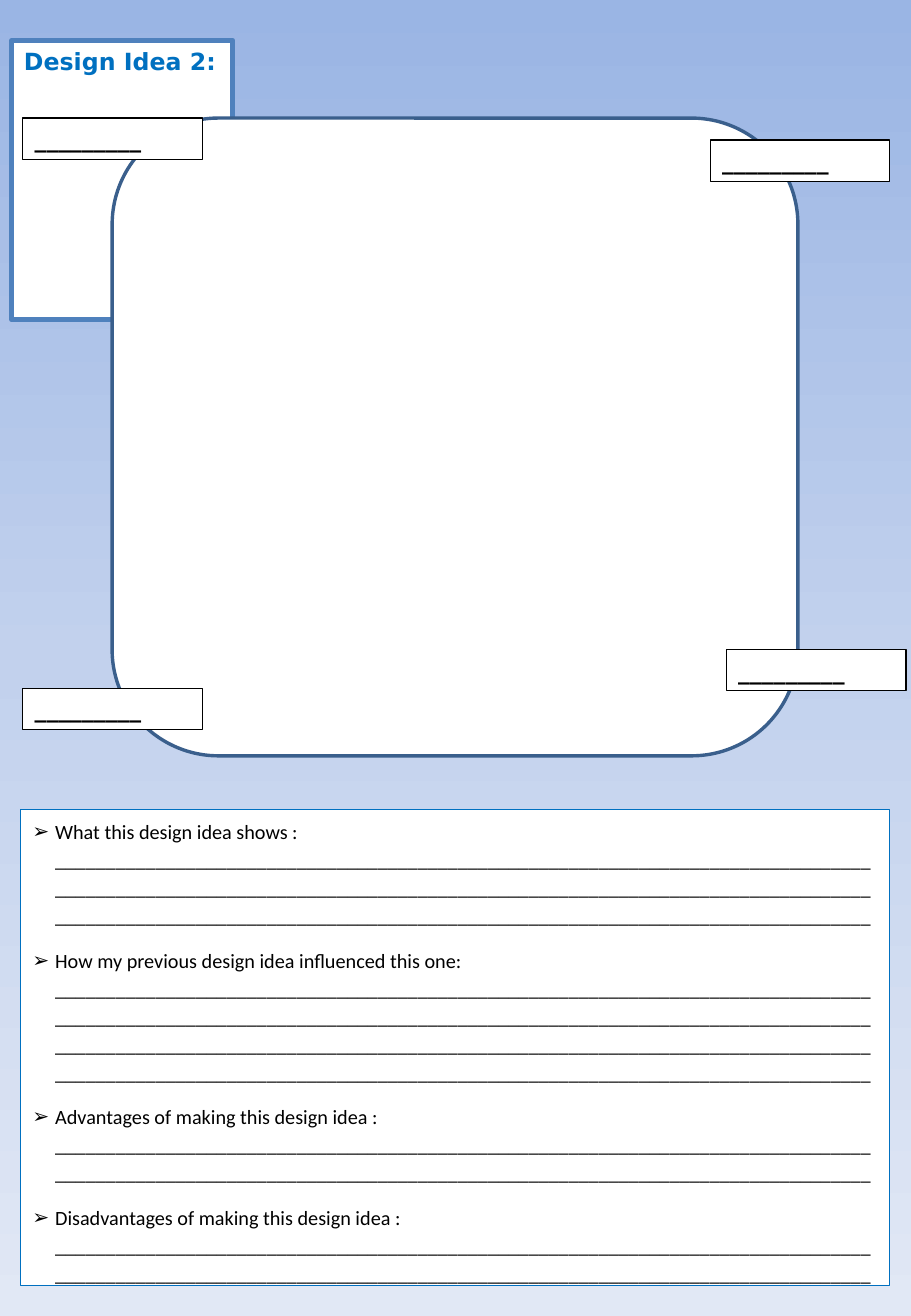
"""Build a worksheet slide for sketching and describing a design idea."""
from copy import deepcopy
from dataclasses import dataclass

from lxml import etree
from pptx import Presentation
from pptx.dml.color import RGBColor
from pptx.enum import shapes, text
from pptx.oxml import ns
from pptx.util import Pt


@dataclass(frozen=True)
class Theme:
    """Colours, fonts and type sizes of the worksheet."""
    background: tuple = ((0, "9AB5E4"), (0.5, "C2D1ED"), (1, "E1E8F5"))
    paper: str = "FFFFFF"
    ink: str = "000000"
    accent: str = "0070C0"
    title_line: str = "4F81BD"
    frame_line: str = "3A5F8C"
    heading_font: str = "DejaVu Sans"
    body_font: str = "Calibri"
    heading_size: int = 14
    body_size: int = 12


THEME = Theme()
RULE = "_" * 81
LABEL = "_" * 9
LABEL_SIZE = (106.5, 24.5)
LABEL_CORNERS = ((13.5, 70), (13.5, 408), (430.5, 385), (421, 83))
QUESTIONS = (
    ("What this design idea shows :", 3),
    ("How my previous design idea influenced this one:", 4),
    ("Advantages of making this design idea :", 2),
    ("Disadvantages of making this design idea :", 2),
)


def paint_background(slide):
    """Fill the slide with a vertical gradient."""
    fill = slide.background.fill
    fill.gradient()
    fill.gradient_angle = 270
    stop_list = slide.element.xpath(".//a:gsLst")[0]
    stop_list.append(deepcopy(stop_list[-1]))
    for stop, (position, color) in zip(fill.gradient_stops, THEME.background):
        stop.position = position
        stop.color.rgb = RGBColor.from_string(color)


def style_box(shape, box, line_color, line_width):
    """Place a shape and give it a paper fill and an outline."""
    shape.left, shape.top, shape.width, shape.height = map(Pt, box)
    shape.fill.solid()
    shape.fill.fore_color.rgb = RGBColor.from_string(THEME.paper)
    shape.line.color.rgb = RGBColor.from_string(line_color)
    shape.line.width = Pt(line_width)


def style_text(shape, font_name, size, color, bold):
    """Set the frame and font of all text in a shape."""
    frame = shape.text_frame
    frame.word_wrap = True
    frame.auto_size = text.MSO_AUTO_SIZE.SHAPE_TO_FIT_TEXT
    frame.vertical_anchor = text.MSO_ANCHOR.TOP
    for paragraph in frame.paragraphs:
        paragraph.alignment = text.PP_ALIGN.LEFT
        paragraph.space_before = Pt(0)
        for run in paragraph.runs:
            run.font.name = font_name
            run.font.size = Pt(size)
            run.font.bold = bold
            run.font.color.rgb = RGBColor.from_string(color)


def add_box(slide, kind, box, line_color, line_width):
    """Add a paper-coloured preset shape without a shadow."""
    shape = slide.shapes.add_shape(kind, *map(Pt, box))
    shape.shadow.inherit = False
    style_box(shape, box, line_color, line_width)
    return shape


def add_label(slide, corner):
    """Add a blank label to be filled in."""
    label = add_box(slide, shapes.MSO_SHAPE.RECTANGLE, corner + LABEL_SIZE, THEME.ink, 0.75)
    label.text_frame.text = LABEL
    style_text(label, THEME.heading_font, THEME.heading_size, THEME.ink, True)


def set_title(slide, wording):
    """Format the title placeholder as an outlined box."""
    title = slide.shapes.title
    style_box(title, (7, 24, 131, 24), THEME.title_line, 3)
    title.text_frame.text = wording
    style_text(title, THEME.heading_font, THEME.heading_size, THEME.accent, True)


def add_bullet(paragraph):
    """Give a paragraph an arrowhead bullet with a hanging indent."""
    properties = paragraph._p.get_or_add_pPr()
    properties.set("marL", str(Pt(13.5)))
    properties.set("indent", str(Pt(-13.5)))
    etree.SubElement(properties, ns.qn("a:buChar"), char="➢")


def set_questions(slide):
    """Fill the body placeholder with questions and ruled answer lines."""
    body = slide.placeholders[1]
    style_box(body, (12, 480, 515.5, 289), THEME.accent, 0.75)
    frame = body.text_frame
    frame.text = "\n".join("\v".join([question] + [RULE] * lines) for question, lines in QUESTIONS)
    for paragraph in frame.paragraphs:
        add_bullet(paragraph)
        paragraph.line_spacing = 1.15
        paragraph.space_after = Pt(10)
    style_text(body, THEME.body_font, THEME.body_size, THEME.ink, False)


def main():
    """Build and save the worksheet."""
    presentation = Presentation()
    presentation.slide_width, presentation.slide_height = Pt(540), Pt(780)
    slide = presentation.slides.add_slide(presentation.slide_layouts[1])
    paint_background(slide)
    set_title(slide, "Design Idea 2:")
    set_questions(slide)
    add_box(slide, shapes.MSO_SHAPE.ROUNDED_RECTANGLE, (66.5, 70, 406.5, 378), THEME.frame_line, 2)
    for corner in LABEL_CORNERS:
        add_label(slide, corner)
    presentation.save("out.pptx")


if __name__ == "__main__":
    main()
